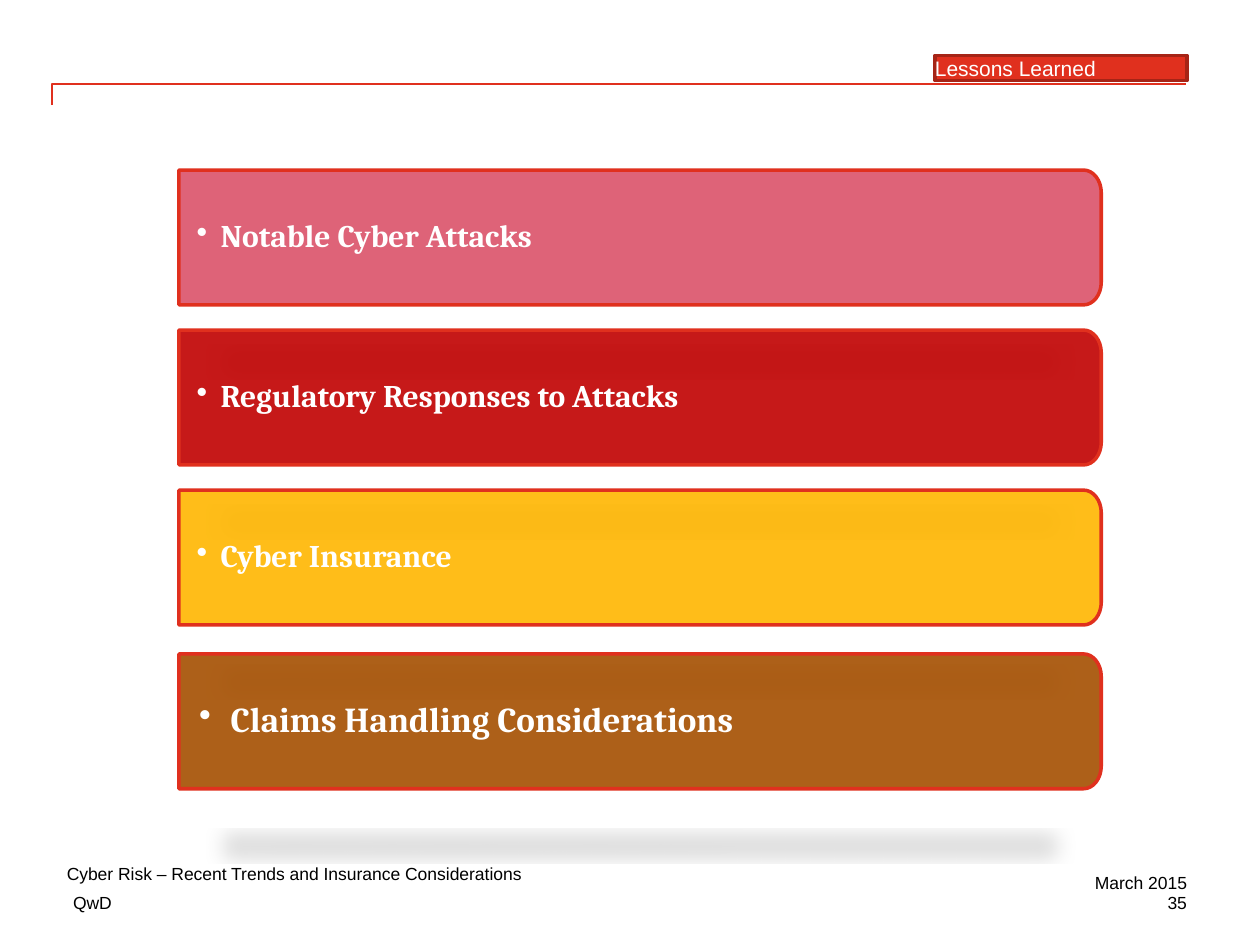
from lxml import etree
from pptx import Presentation
from pptx.dml.color import RGBColor
from pptx.enum.shapes import MSO_CONNECTOR, MSO_SHAPE
from pptx.enum.text import MSO_ANCHOR, PP_ALIGN
from pptx.oxml import parse_xml
from pptx.oxml.ns import qn
from pptx.util import Inches, Pt

RECTANGLE, ELBOW = MSO_SHAPE.RECTANGLE, MSO_CONNECTOR.ELBOW
TOP, MIDDLE = MSO_ANCHOR.TOP, MSO_ANCHOR.MIDDLE
LEFT, RIGHT = PP_ALIGN.LEFT, PP_ALIGN.RIGHT

RED, DARK_RED, WHITE, BLACK = "E0301E", "A62416", "FFFFFF", "000000"
BAR_LEFT, BAR_WIDTH, BAR_HEIGHT = 1.42, 7.32, 1.07
CORNER_WIDTH, CORNER_HEIGHT = 0.14, 0.18
CURVE = 0.55  # how far a corner's handles reach

# Topic, top, colour, text size, left inset, bullet indent
TOPICS = [
    ("Notable Cyber Attacks", 1.35, "DB536A", 18, 0.14, 0.19),
    ("Regulatory Responses to Attacks", 2.62, "C00000", 18, 0.14, 0.19),
    ("Cyber Insurance", 3.89, "FFB600", 18, 0.14, 0.19),
    ("Claims Handling Considerations", 5.19, "A54F00", 20, 0.16, 0.25),
]

# Flattened reflection below each bar
BAR_SHADOW = (
    '<a:effectLst xmlns:a="http://schemas.openxmlformats.org/drawingml/2006/main">'
    '<a:outerShdw blurRad="152400" dist="317500" dir="5400000" sx="90000" sy="-19000"'
    ' rotWithShape="0"><a:srgbClr val="000000"><a:alpha val="15000"/></a:srgbClr>'
    '</a:outerShdw></a:effectLst>'
)


def color(value):
    return RGBColor.from_string(value)


def style(shape, fill, line):
    shape.shadow.inherit = False
    shape.fill.solid()
    shape.fill.fore_color.rgb = color(fill)
    shape.line.color.rgb = color(line)
    shape.line.width = Pt(2)


def write(shape, text, size, text_color, font="Arial", bold=False, align=LEFT,
          anchor=TOP, insets=(0, 0, 0, 0), wrap=True):
    frame = shape.text_frame
    frame.word_wrap = wrap
    frame.vertical_anchor = anchor
    (frame.margin_left, frame.margin_top,
     frame.margin_right, frame.margin_bottom) = map(Inches, insets)
    paragraph = frame.paragraphs[0]
    paragraph.alignment = align
    run = paragraph.add_run()
    run.text = text
    run.font.size = Pt(size)
    run.font.name = font
    run.font.bold = bold
    run.font.color.rgb = color(text_color)
    return paragraph


def add_label(slide, text, left, top, width, **options):
    label = slide.shapes.add_textbox(*map(Inches, (left, top, width, 0.17)))
    write(label, text, 10, BLACK, **options)


def add_header_rule(slide):
    # One bend, turned a quarter about its centre
    rule = slide.shapes.add_connector(ELBOW, *map(Inches, (5, 5.25, 4.83, -3.75)))
    rule.line.color.rgb = color(RED)
    rule.line.width = Pt(1)
    properties = rule._element.spPr
    properties.find(qn("a:xfrm")).set("rot", "5400000")
    properties.find(qn("a:prstGeom")).set("prst", "bentConnector2")
    etree.SubElement(properties, qn("a:effectLst"))


def round_corner(segment, start, corner, end):
    """Turn a straight segment into a curve that bulges toward the corner."""
    handles = [[p + (c - p) * CURVE for p, c in zip(point, corner)]
               for point in (start, end)]
    curve = etree.Element(qn("a:cubicBezTo"))
    for x, y in (*handles, end):
        etree.SubElement(curve, qn("a:pt"), x=str(Inches(x)), y=str(Inches(y)))
    segment.getparent().replace(segment, curve)


def add_bar(slide, top):
    shoulder = BAR_WIDTH - CORNER_WIDTH
    upper = (BAR_WIDTH, CORNER_HEIGHT)
    lower = (BAR_WIDTH, BAR_HEIGHT - CORNER_HEIGHT)
    lower_end, upper_start = (shoulder, BAR_HEIGHT), (shoulder, 0)
    points = [lower, lower_end, (0, BAR_HEIGHT), (0, 0), upper_start, upper]
    builder = slide.shapes.build_freeform(*map(Inches, upper))
    builder.add_line_segments([tuple(map(Inches, point)) for point in points])
    bar = builder.convert_to_shape(Inches(BAR_LEFT), Inches(top))

    segments = list(bar._element.iter(qn("a:lnTo")))
    round_corner(segments[1], lower, (BAR_WIDTH, BAR_HEIGHT), lower_end)
    round_corner(segments[5], upper_start, (BAR_WIDTH, 0), upper)
    return bar


def add_topic(slide, topic, top, fill, size, inset, indent):
    bar = add_bar(slide, top)
    style(bar, fill, RED)
    properties = bar._element.spPr
    fill_color = properties.find(qn("a:solidFill")).find(qn("a:srgbClr"))
    etree.SubElement(fill_color, qn("a:alpha")).set("val", "90000")
    properties.replace(properties.find(qn("a:effectLst")), parse_xml(BAR_SHADOW))

    paragraph = write(bar, topic, size, WHITE, font="Cambria", bold=True,
                      anchor=MIDDLE, insets=(inset, 0.05, 0.05, 0.05))
    paragraph.level = 1
    paragraph.line_spacing = 0.9
    settings = paragraph._p.get_or_add_pPr()
    settings.set("marL", str(Inches(indent)))
    settings.set("indent", str(-Inches(indent)))
    space_after = etree.SubElement(settings, qn("a:spcAft"))
    etree.SubElement(space_after, qn("a:spcPct")).set("val", "15000")
    etree.SubElement(settings, qn("a:buChar")).set("char", "••")


def add_section_tag(slide, text):
    tag = slide.shapes.add_shape(RECTANGLE, *map(Inches, (7.42, 0.44, 2, 0.2)))
    style(tag, RED, DARK_RED)
    write(tag, text, 12, WHITE)


def main():
    deck = Presentation()
    deck.slide_width, deck.slide_height = Inches(10), Inches(7.5)
    slide = deck.slides.add_slide(deck.slide_layouts[6])

    add_header_rule(slide)

    # Left footer
    add_label(slide, "QwD", 0.58, 7.08, 2.83)
    add_label(slide, "Cyber Risk – Recent Trends and Insurance Considerations",
              0.53, 6.85, 3.68, wrap=False)

    # Topic bars
    for topic in TOPICS:
        add_topic(slide, *topic)

    # Right footer and section tag
    add_label(slide, "35", 7.75, 7.08, 1.67, align=RIGHT)
    add_label(slide, "March 2015", 7.75, 6.92, 1.67, align=RIGHT)
    add_section_tag(slide, "Lessons Learned")

    deck.save("out.pptx")


if __name__ == "__main__":
    main()
